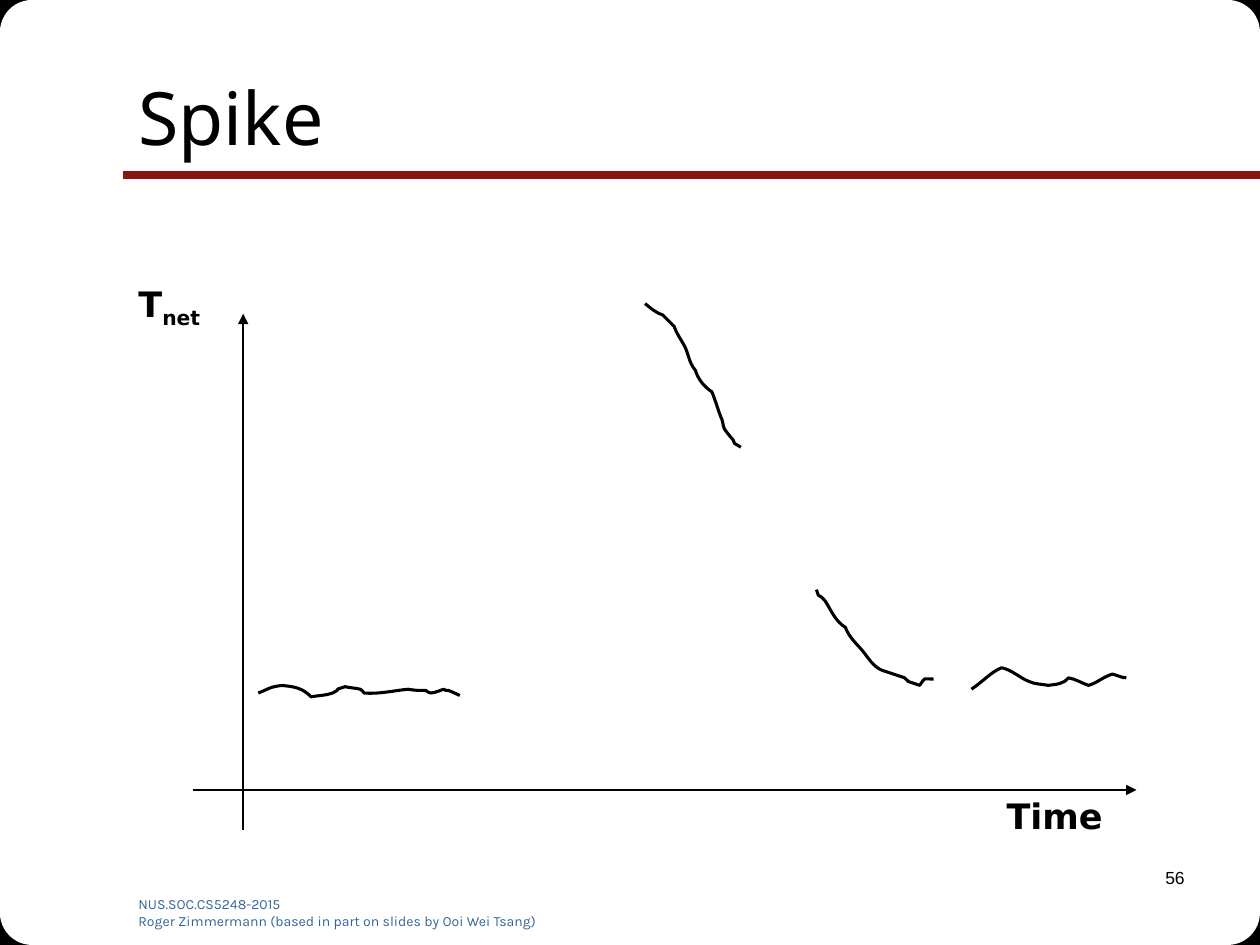
from lxml import etree
from pptx import Presentation
from pptx import util as u
from pptx.dml.color import RGBColor
from pptx.enum import shapes, text
from pptx.oxml.ns import qn

COLUMNS, ROWS = 1000, 750
CELL = u.Inches(0.01)
BLACK = RGBColor(0x00, 0x00, 0x00)
WHITE = RGBColor(0xFF, 0xFF, 0xFF)
DARK_RED = RGBColor(0x89, 0x14, 0x11)
FOOTER_BLUE = RGBColor(0x33, 0x66, 0x99)

TITLE = dict(size=u.Pt(42), name="Noto Sans")
FOOTER = dict(size=u.Pt(8), name="Karla")
NUMBER = dict(size=u.Pt(10), name="Arial")
AXIS_LABEL = dict(size=u.Pt(20), name="DejaVu Sans", bold=True)

CURVES = [
    [(205, 550), (213, 547), (214, 545), (224, 544), (234, 545), (240, 546), (247, 553),
     (252, 552), (259, 552), (264, 550), (274, 545), (261, 549), (274, 545),
     (278, 546), (282, 546), (286, 547), (288, 547), (288, 550), (289, 550),
     (301, 551), (313, 548), (324, 547), (329, 548), (333, 548), (338, 548),
     (339, 549), (341, 550), (342, 550), (345, 550), (352, 547), (352, 547),
     (353, 548), (355, 548), (356, 548), (359, 549), (365, 552), (365, 552)],
    [(512, 241), (517, 245), (520, 248), (526, 250), (529, 253), (532, 256), (535, 259),
     (537, 265), (541, 270), (544, 276), (547, 283), (547, 288), (552, 294),
     (554, 301), (559, 307), (565, 311), (568, 318), (570, 326), (573, 333),
     (574, 336), (574, 340), (576, 342), (577, 344), (579, 345), (580, 347),
     (582, 348), (582, 350), (583, 352), (585, 353), (588, 355), (588, 355)],
    [(648, 468), (651, 477), (648, 469), (655, 477), (660, 485), (663, 493), (671, 498),
     (674, 506), (680, 511), (685, 517), (689, 522), (693, 529), (700, 532),
     (706, 534), (712, 536), (718, 538), (719, 539), (720, 540), (721, 541),
     (724, 542), (730, 544), (730, 544), (735, 537), (732, 539), (741, 539)],
    [(771, 547), (779, 542), (787, 533), (795, 530), (804, 532), (809, 538), (817, 541),
     (821, 543), (827, 543), (832, 544), (839, 543), (844, 543), (848, 538),
     (854, 539), (858, 542), (864, 544), (871, 542), (876, 537), (883, 535),
     (887, 536), (890, 538), (894, 538)],
]


def grid(*cells):
    return [cell * CELL for cell in cells]


def add_corners(slide, kind, side, color, outline=None):
    for left in (0, COLUMNS - side):
        for top in (0, ROWS - side):
            shape = slide.shapes.add_shape(kind, *grid(left, top, side, side))
            shape.shadow.inherit = False
            shape.fill.solid()
            shape.fill.fore_color.rgb = color
            if outline:
                shape.line.color.rgb = color
                shape.line.width = outline
            else:
                shape.line.fill.background()


def add_line(slide, start, end, color, width, arrow=False):
    line = slide.shapes.add_connector(
        shapes.MSO_CONNECTOR.STRAIGHT, *grid(*start, *end))
    line.line.color.rgb = color
    line.line.width = width
    if arrow:
        etree.SubElement(line.line._get_or_add_ln(), qn("a:tailEnd"), type="triangle")
    etree.SubElement(line._element.spPr, qn("a:effectLst"))


def add_text(slide, box, lines, style, color=BLACK, frame_style=None,
             align=text.PP_ALIGN.LEFT):
    shape = slide.shapes.add_textbox(*grid(*box))
    frame = shape.text_frame
    for key, value in {"word_wrap": True, **(frame_style or {})}.items():
        setattr(frame, key, value)
    for index, line in enumerate(lines):
        paragraph = frame.add_paragraph() if index else frame.paragraphs[0]
        paragraph.alignment = align
        run = paragraph.add_run()
        run.text = line
        format_font(run.font, style, color)
    return frame


def format_font(font, style, color):
    for key, value in style.items():
        setattr(font, key, value)
    font.color.rgb = color


def add_axis_label(slide, box, label, subscript=None):
    fitted = dict(word_wrap=False, auto_size=text.MSO_AUTO_SIZE.SHAPE_TO_FIT_TEXT)
    frame = add_text(slide, box, [label], AXIS_LABEL, frame_style=fitted)
    if subscript:
        run = frame.paragraphs[0].add_run()
        run.text = subscript
        format_font(run.font, AXIS_LABEL, BLACK)
        run.font._element.set("baseline", "-25000")


def add_curve(slide, points):
    builder = slide.shapes.build_freeform(*points[0], scale=CELL)
    builder.add_line_segments(points[1:], close=False)
    curve = builder.convert_to_shape()
    curve.shadow.inherit = False
    curve.fill.background()
    curve.line.color.rgb = BLACK
    curve.line.width = u.Pt(1.75)
    path = next(curve._element.iter(qn("a:path")))
    segments = path.findall(qn("a:lnTo"))
    for first in range(0, len(segments), 3):
        bezier = etree.SubElement(path, qn("a:cubicBezTo"))
        for segment in segments[first:first + 3]:
            bezier.append(segment[0])
            path.remove(segment)


def main():
    presentation = Presentation()
    presentation.slide_width, presentation.slide_height = grid(COLUMNS, ROWS)
    slide = presentation.slides.add_slide(presentation.slide_layouts[6])

    add_corners(slide, shapes.MSO_SHAPE.RECTANGLE, 43, BLACK, u.Pt(0.75))
    add_corners(slide, shapes.MSO_SHAPE.ROUNDED_RECTANGLE, 153, WHITE)
    add_line(slide, (COLUMNS, 139), (98, 139), DARK_RED, u.Pt(4.5))
    add_text(slide, (100, 706, 342, 28),
             ["NUS.SOC.CS5248-2015",
              "Roger Zimmermann (based in part on slides by Ooi Wei Tsang)"],
             FOOTER, FOOTER_BLUE)
    add_text(slide, (742, 683, 208, 50), ["56"], NUMBER, align=text.PP_ALIGN.RIGHT)
    add_text(slide, (100, 30, 850, 125), ["Spike"], TITLE,
             frame_style=dict(vertical_anchor=text.MSO_ANCHOR.MIDDLE))

    for start, end in (((153, 627), (902, 627)), ((193, 659), (193, 249))):
        add_line(slide, start, end, BLACK, u.Pt(1.25), arrow=True)
    add_axis_label(slide, (789, 626, 100, 44), "Time")
    add_axis_label(slide, (100, 219, 74, 44), "T", "net")
    for points in CURVES:
        add_curve(slide, points)

    presentation.save("out.pptx")


if __name__ == "__main__":
    main()
